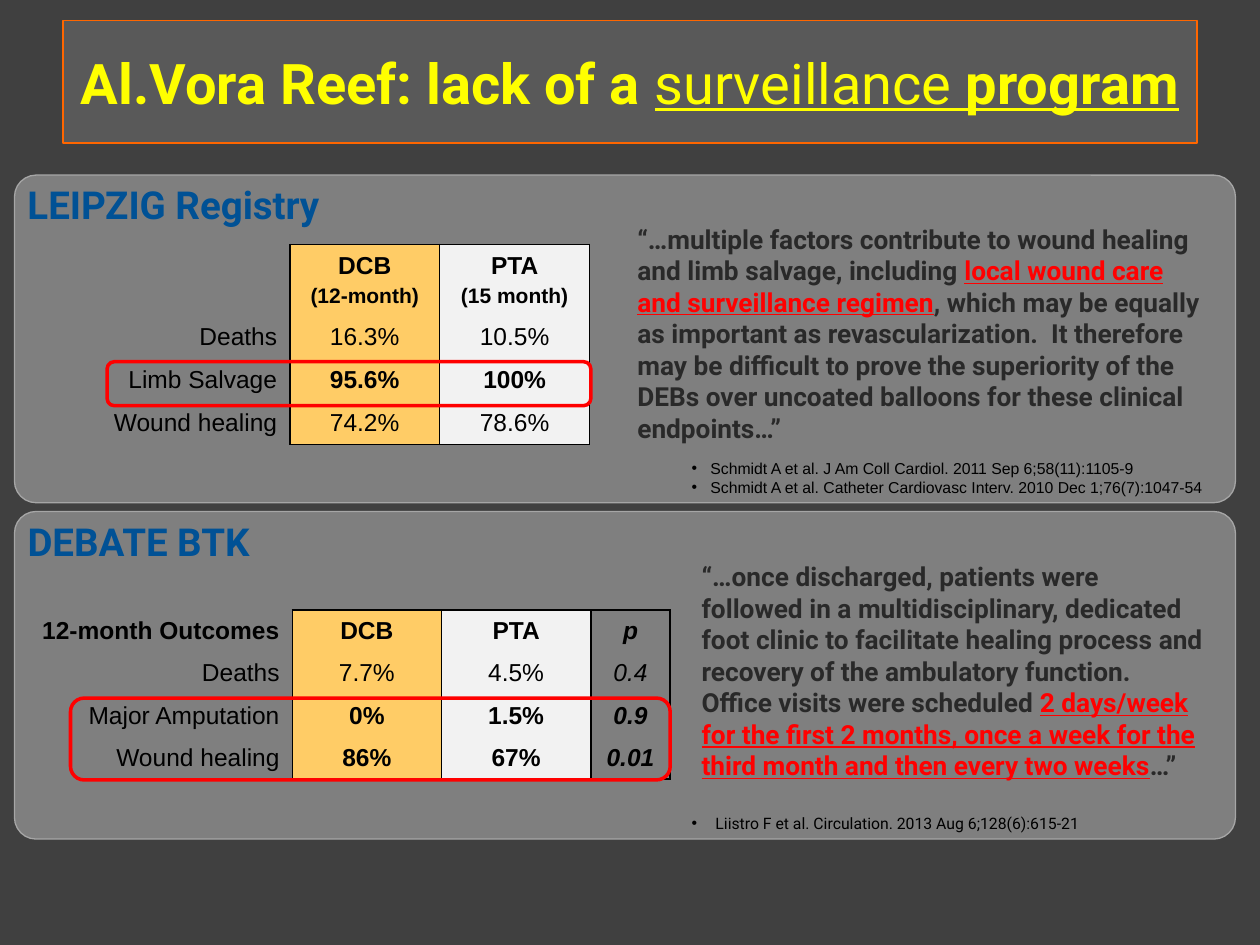
from lxml import etree
from pptx import Presentation
from pptx import util as u
from pptx.dml.color import RGBColor
from pptx.enum import shapes, text
from pptx.oxml import ns

UNIT = u.Inches(0.1)  # the slide is a grid of 100 columns by 75 rows
NO_STYLE = "{2D5ABB26-0587-4C30-8999-92F81FD0307C}"
BLACK, RED, DARK = "000000", "FF0000", "292929"
COLUMN_FILLS = [None, "FFCC66", "F2F2F2", None]
LEFT, CENTER, RIGHT = text.PP_ALIGN.LEFT, text.PP_ALIGN.CENTER, text.PP_ALIGN.RIGHT


def color(value):
    return RGBColor.from_string(value)


def grid(*cells):
    return [round(cell * UNIT) for cell in cells]


def paint(fill, value):
    """Fill with a colour, or leave clear when there is none."""
    if value:
        fill.solid()
        fill.fore_color.rgb = color(value)
    else:
        fill.background()


def style(para, size, face, value, bold=False, italic=False, align=LEFT):
    font = para.font
    font.size, font.name, font.bold, font.italic = u.Pt(size), face, bold, italic
    font.color.rgb = color(value)
    para.alignment = align


def add_spans(para, spans):
    """Add (wording, font settings) pairs as runs."""
    for wording, settings in spans:
        span = para.add_run()
        span.text = wording
        for name, value in settings.items():
            if name == "color":
                span.font.color.rgb = color(value)
            else:
                setattr(span.font, name, value)


def add_panel(page, place, fill, line, width, kind="ROUNDED_RECTANGLE", corner=None):
    panel = page.shapes.add_shape(shapes.MSO_SHAPE[kind], *grid(*place))
    panel.shadow.inherit = False
    paint(panel.fill, fill)
    panel.line.color.rgb = color(line)
    panel.line.width = u.Pt(width)
    if corner is not None:
        panel.adjustments[0] = corner
    return panel


def add_box(page, place, wrap=True):
    frame = page.shapes.add_textbox(*grid(*place)).text_frame
    frame.word_wrap = wrap
    frame.auto_size = text.MSO_AUTO_SIZE.SHAPE_TO_FIT_TEXT
    return frame


def add_title(page):
    box = add_panel(page, (5, 1.65, 90, 9.7), "595959", "FF6600", 0.75, "RECTANGLE")
    box.text_frame.word_wrap = False
    box.text_frame.vertical_anchor = text.MSO_ANCHOR.MIDDLE
    para = box.text_frame.paragraphs[0]
    style(para, 32, "Roboto", "FFFF00", bold=True, align=CENTER)
    add_spans(para, [
        ("Al.Vora Reef: lack of a ", {}),
        ("surveillance ", {"bold": False, "underline": True}),
        ("program", {"underline": True}),
    ])


def add_study(page, top, name, name_width):
    """Add the rounded panel of a study with its heading."""
    add_panel(page, (1.15, top, 96.9, 26), "7F7F7F", "A6A6A6", 0.75, corner=0.066)
    para = add_box(page, (1.2, top, name_width, 4.7), wrap=False).paragraphs[0]
    para.text = name
    style(para, 22, "Roboto", "005195", bold=True)


def add_quote(page, place, before, stressed, after):
    para = add_box(page, place).paragraphs[0]
    style(para, 15, "Roboto", DARK, bold=True)
    add_spans(para, [
        (before, {}),
        (stressed, {"color": RED, "underline": True}),
        (after, {}),
    ])


def add_references(page, place, face, indent, references):
    frame = add_box(page, place)
    for index, reference in enumerate(references):
        para = frame.add_paragraph() if index else frame.paragraphs[0]
        para.text = reference
        style(para, 9, face, BLACK)
        props = para._p.get_or_add_pPr()
        props.set("marL", str(u.Inches(indent)))
        props.set("indent", str(u.Inches(-0.19)))
        etree.SubElement(props, ns.qn("a:buFont"), typeface="Arial")
        etree.SubElement(props, ns.qn("a:buChar"), char="•")


def add_borders(cell, sides):
    props = cell._tc.get_or_add_tcPr()
    for side in sides:
        line = etree.SubElement(props, ns.qn(f"a:ln{side}"), w=str(u.Pt(1)))
        fill = etree.SubElement(line, ns.qn("a:solidFill"))
        etree.SubElement(fill, ns.qn("a:srgbClr"), val=BLACK)


def fill_cell(cell, wording, column, bold):
    paint(cell.fill, COLUMN_FILLS[column])
    cell.vertical_anchor = text.MSO_ANCHOR.MIDDLE
    cell.text = wording
    for index, para in enumerate(cell.text_frame.paragraphs):
        style(para, 12 if index else 14, "Arial", BLACK, bold, column == 3,
              CENTER if column else RIGHT)
        if index:
            para.space_before = u.Pt(2.4)


def add_outcomes(page, left, top, widths, heights, rows, bold_rows):
    """Add a table whose value columns are framed and whose bold rows stand out."""
    frame = page.shapes.add_table(
        len(rows), len(widths), *grid(left, top, sum(widths), sum(heights)))
    table = frame.table
    table.first_row = table.horz_banding = False
    table._tbl.tblPr.find(ns.qn("a:tableStyleId")).text = NO_STYLE
    for column, width in zip(table.columns, widths):
        column.width = round(width * UNIT)
    for row, height in zip(table.rows, heights):
        row.height = round(height * UNIT)
    last = len(rows) - 1
    for r, row in enumerate(rows):
        for c, wording in enumerate(row):
            cell = table.cell(r, c)
            if c:
                add_borders(cell, "LR" + "T" * (r == 0) + "B" * (r == last))
            fill_cell(cell, wording, c, r in bold_rows and (c > 0 or r == 0))


def add_highlight(page, *place):
    add_panel(page, place, None, RED, 2)


def add_leipzig(page):
    add_study(page, 13.9, "LEIPZIG Registry", 25.3)
    add_outcomes(page, 6.7, 19.4, [16.3, 11.9, 11.9], [5.6, 3.4, 3.4, 3.4], [
        ["", "DCB\n(12-month)", "PTA\n(15 month)"],
        ["Deaths", "16.3%", "10.5%"],
        ["Limb Salvage", "95.6%", "100%"],
        ["Wound healing", "74.2%", "78.6%"],
    ], bold_rows={0, 2})
    add_highlight(page, 8.5, 28.7, 38.4, 3.5)
    add_quote(
        page, (49.6, 17.2, 46.9, 18.5),
        "“…multiple factors contribute to wound healing and limb salvage, including ",
        "local wound care and surveillance regimen",
        ", which may be equally as important as revascularization.  It therefore may be "
        "difficult to prove the superiority of the DEBs over uncoated balloons for these "
        "clinical endpoints…”")
    add_references(page, (53.9, 35.9, 44.1, 4), "Arial", 0.15, [
        "Schmidt A et al. J Am Coll Cardiol. 2011 Sep 6;58(11):1105-9",
        "Schmidt A et al. Catheter Cardiovasc Interv. 2010 Dec 1;76(7):1047-54",
    ])


def add_debate(page):
    add_study(page, 40.6, "DEBATE BTK", 20.5)
    add_outcomes(page, 2, 48.4, [21.2, 11.85, 11.85, 6.3], [3.36] * 4, [
        ["12-month Outcomes", "DCB", "PTA", "p"],
        ["Deaths", "7.7%", "4.5%", "0.4"],
        ["Major Amputation", "0%", "1.5%", "0.9"],
        ["Wound healing", "86%", "67%", "0.01"],
    ], bold_rows={0, 2, 3})
    add_highlight(page, 5.6, 55.4, 47.6, 6.5)
    add_quote(
        page, (54.7, 44, 41.8, 18.7),
        "“…once discharged, patients were followed in a multidisciplinary, dedicated foot "
        "clinic to facilitate healing process and recovery of the ambulatory function. "
        "Office visits were scheduled ",
        "2 days/week for the first 2 months, once a week for the third month and then "
        "every two weeks",
        "…”")
    add_references(page, (53.9, 64.1, 34.7, 2.5), "Roboto", 0.19, [
        "Liistro F et al. Circulation. 2013 Aug 6;128(6):615-21",
    ])


def main():
    deck = Presentation()
    deck.slide_width, deck.slide_height = grid(100, 75)
    page = deck.slides.add_slide(deck.slide_layouts[6])
    paint(page.background.fill, "404040")
    add_title(page)
    add_leipzig(page)
    add_debate(page)
    deck.save("out.pptx")


if __name__ == "__main__":
    main()
